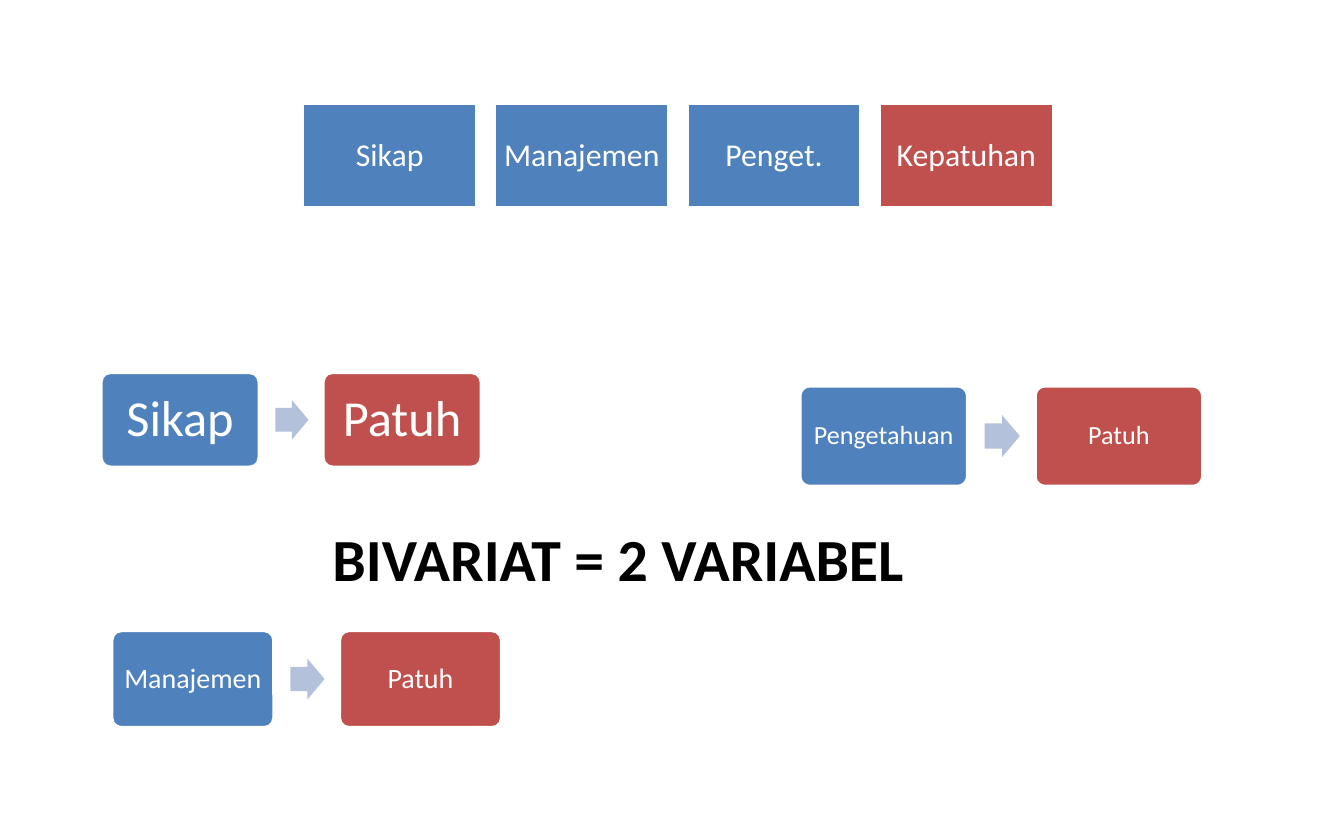
from dataclasses import dataclass

from pptx import Presentation
from pptx import util as u
from pptx.dml.color import RGBColor
from pptx.enum import shapes, text


@dataclass(frozen=True)
class Theme:
    font: str = "Calibri"
    factor: RGBColor = RGBColor(0x4F, 0x81, 0xBD)
    outcome: RGBColor = RGBColor(0xC0, 0x50, 0x4D)
    arrow: RGBColor = RGBColor(0xB3, 0xC1, 0xDB)
    white: RGBColor = RGBColor(0xFF, 0xFF, 0xFF)
    black: RGBColor = RGBColor(0, 0, 0)
    heading_size: int = 32
    variable_size: int = 17
    outline: int = 2


class VariableSlide:
    def __init__(self, slide, theme):
        self.slide = slide
        self.theme = theme

    def style_text(self, frame, words, size, color, bold=False):
        frame.text = words
        frame.word_wrap = True
        paragraph = frame.paragraphs[0]
        paragraph.alignment = text.PP_ALIGN.CENTER
        font = paragraph.font
        font.name, font.size, font.bold = self.theme.font, u.Pt(size), bold
        font.color.rgb = color
        return paragraph

    def heading(self, words, left, top, width, height):
        title = self.slide.shapes.title
        title.left, title.top = u.Inches(left), u.Inches(top)
        title.width, title.height = u.Inches(width), u.Inches(height)
        frame = title.text_frame
        self.style_text(frame, words, self.theme.heading_size, self.theme.black, True)
        frame.auto_size = text.MSO_AUTO_SIZE.NONE
        frame.vertical_anchor = text.MSO_ANCHOR.TOP

    def block(self, kind, left, top, width, height, fill):
        block = self.slide.shapes.add_shape(
            kind, u.Inches(left), u.Inches(top), u.Inches(width), u.Inches(height))
        block.shadow.inherit = False
        block.fill.solid()
        block.fill.fore_color.rgb = fill
        block.line.fill.background()
        return block

    def variable(self, kind, words, left, top, width, height, fill, size, inset):
        box = self.block(kind, left, top, width, height, fill)
        box.line.color.rgb = self.theme.white
        box.line.width = u.Pt(self.theme.outline)
        frame = box.text_frame
        frame.margin_left = frame.margin_right = u.Inches(inset)
        frame.margin_top = frame.margin_bottom = u.Inches(inset)
        frame.vertical_anchor = text.MSO_ANCHOR.MIDDLE
        paragraph = self.style_text(frame, words, size, self.theme.white)
        paragraph.line_spacing = 0.9
        return box

    def relation(self, factor, outcome, left, top, width, size, inset):
        """Draw factor -> outcome, with every proportion taken from the box width."""
        height = 0.6 * width
        sides = ((factor, left, self.theme.factor),
                 (outcome, left + 1.4 * width, self.theme.outcome))
        for words, x, fill in sides:
            box = self.variable(shapes.MSO_SHAPE.ROUNDED_RECTANGLE, words,
                                x, top, width, height, fill, size, inset)
            box.adjustments[0] = 0.1
        arrow_height = 0.25 * width
        arrow = self.block(shapes.MSO_SHAPE.RIGHT_ARROW, left + 1.1 * width,
                           top + (height - arrow_height) / 2,
                           0.21 * width, arrow_height, self.theme.arrow)
        arrow.adjustments[0] = 0.6


def main():
    presentation = Presentation()
    presentation.slide_width = u.Inches(10)
    presentation.slide_height = u.Inches(6.25)
    theme = Theme()
    page = VariableSlide(
        presentation.slides.add_slide(presentation.slide_layouts[5]), theme)

    variables = ("Sikap", "Manajemen", "Penget.", "Kepatuhan")
    for column, name in enumerate(variables):
        fill = theme.outcome if name == "Kepatuhan" else theme.factor
        page.variable(shapes.MSO_SHAPE.RECTANGLE, name, 2.25 + 1.43 * column, 0.77,
                      1.3, 0.78, fill, theme.variable_size, 0.07)

    relations = (
        ("Sikap", 0.75, 2.77, 1.18, 27, 0.11),
        ("Manajemen", 0.83, 4.69, 1.21, 15, 0.06),
        ("Pengetahuan", 5.95, 2.87, 1.25, 14, 0.06),
    )
    for factor, left, top, width, size, inset in relations:
        page.relation(factor, "Patuh", left, top, width, size, inset)

    page.heading("BIVARIAT = 2 VARIABEL", 2.24, 3.83, 4.72, 0.64)
    presentation.save("out.pptx")


if __name__ == "__main__":
    main()
